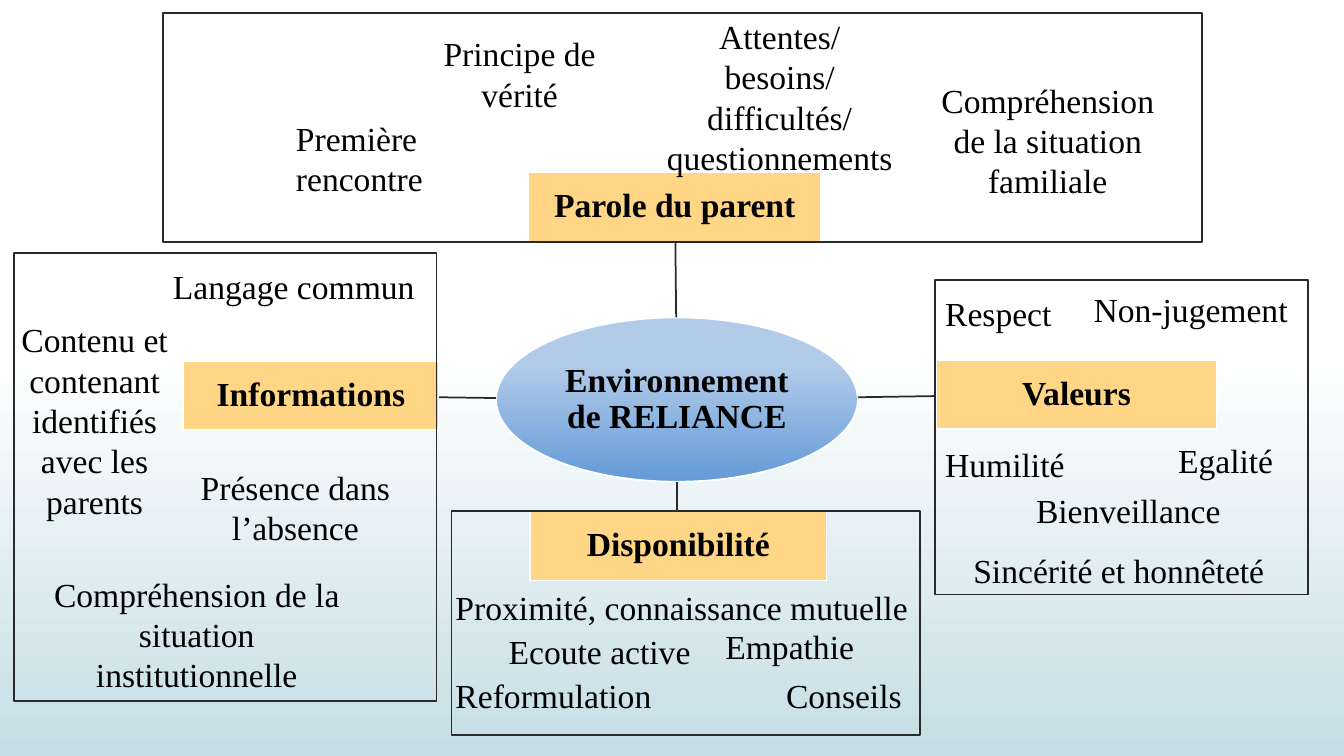
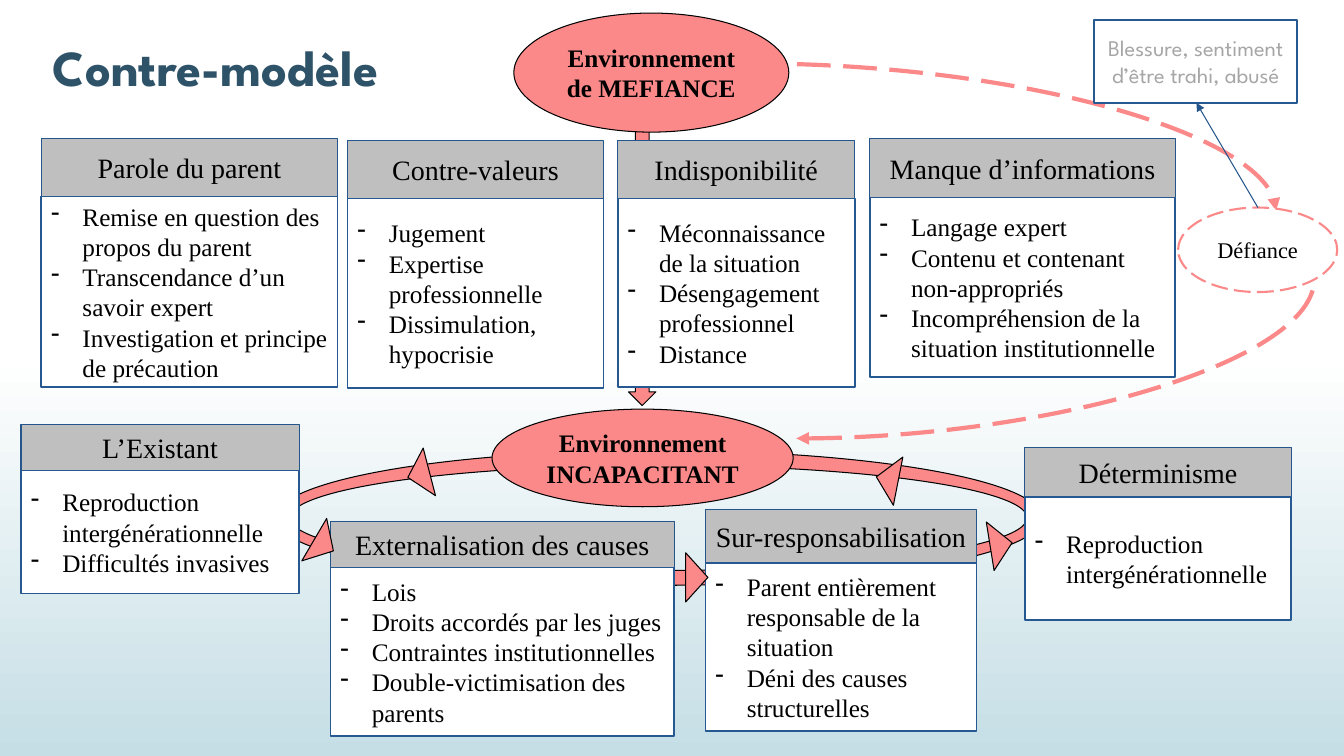
import lxml.etree
import pptx
import pptx.dml.color
import pptx.enum.dml
import pptx.enum.shapes
import pptx.enum.text
import pptx.oxml.ns
import pptx.util

Cm = pptx.util.Cm
Pt = pptx.util.Pt
SHAPE = pptx.enum.shapes.MSO_SHAPE
CONNECTOR = pptx.enum.shapes.MSO_CONNECTOR
ALIGN = pptx.enum.text.PP_ALIGN
ANCHOR = pptx.enum.text.MSO_ANCHOR
AUTO_SIZE = pptx.enum.text.MSO_AUTO_SIZE
qn = pptx.oxml.ns.qn

COLOURS = {
    "white": "FFFFFF", "black": "000000", "mist": "C5DEE5", "title": "2E5369",
    "sky": "B1CBE9", "blue": "649AD6", "amber": "FFD686", "ink": "2A2A2A",
    "coral": "FB8989", "grey": "BFBFBF", "pale": "A6A6A6",
    "header": "24558B", "card": "265991",
}
SERIF = "Times New Roman"
DISPLAY = "League Spartan"
FONTS = {
    "title": ({"name": DISPLAY, "size": Pt(36), "bold": True}, "title"),
    "hub": ({"name": SERIF, "size": Pt(24), "bold": True}, "black"),
    "label": ({"name": SERIF, "size": Pt(24)}, "black"),
    "header": ({"name": SERIF, "size": Pt(20)}, "black"),
    "item": ({"name": SERIF, "size": Pt(18)}, "black"),
    "state": ({"name": SERIF, "size": Pt(18), "bold": True}, "black"),
    "small": ({"name": SERIF, "size": Pt(16)}, "black"),
    "remark": ({"name": DISPLAY, "size": Pt(16)}, "pale"),
}
LONG_DASH = pptx.enum.dml.MSO_LINE.LONG_DASH

RELIANCE_LINKS = [
    ((17.04, 8), (17.02, 6.1)), ((21.62, 10.01), (23.6, 9.98)),
    ((17.07, 12.14), (17.07, 12.88)), ((12.5, 10.03), (11.05, 10.01)),
]
RELIANCE_THEMES = [
    ("Parole du parent", 13.31, 4.34, 7.39), ("Valeurs", 23.6, 9.07, 7.06),
    ("Disponibilité", 13.36, 12.88, 7.47), ("Informations", 4.62, 9.09, 6.43),
]
RELIANCE_FRAMES = [
    (4.11, 0.33, 26.19, 5.77), (23.57, 7.06, 9.4, 7.92),
    (11.38, 12.88, 11.81, 5.64), (0.36, 6.38, 10.64, 11.28),
]
LEFT_LABELS = [
    ("Première rencontre", 7.21, 2.84, 4.17, 2),
    ("Sincérité et honnêteté", 24.28, 13.72, 8.03, 1),
    ("Bienveillance", 25.86, 12.22, 6.05, 1),
    ("Egalité", 29.44, 10.97, 4.37, 1),
    ("Humilité", 23.57, 11.05, 3.61, 1),
    ("Non-jugement", 27.31, 7.16, 5.64, 1),
    ("Respect", 23.57, 7.26, 5.87, 1),
    ("Reformulation", 11.23, 16.87, 5.51, 1),
    ("Proximité, connaissance mutuelle", 11.23, 14.66, 11.96, 1),
    ("Ecoute active", 12.57, 15.77, 5.18, 1),
    ("Empathie", 18.03, 15.65, 3.78, 1),
    ("Conseils", 19.56, 16.89, 3.45, 1),
    ("Langage commun", 4.11, 6.58, 6.96, 1),
]
CENTRED_LABELS = [
    ("Attentes/besoins/difficultés/ questionnements", 16.46, 0.28, 6.38, 4),
    ("Compréhension de la situation familiale", 23.37, 1.88, 6.07, 3),
    ("Principe de vérité", 10.39, 0.71, 5.41, 2),
    ("Contenu et contenant identifiés avec les parents", -0.23, 7.92, 5.23, 5),
    ("Présence dans l’absence", 4.78, 11.63, 5.33, 2),
    ("Compréhension de la situation institutionnelle", 0.97, 14.33, 7.98, 3),
]
CARDS = [
    ("Parole du parent", 1.04, 3.48, 7.47, 1.47, 4.8,
     ["Remise en question des propos du parent", "Transcendance d’un savoir expert",
      "Investigation et principe de précaution"]),
    ("Contre-valeurs", 8.76, 3.53, 6.45, 1.47, 4.78,
     ["Jugement", "Expertise professionnelle", "Dissimulation, hypocrisie"]),
    ("Indisponibilité", 15.57, 3.53, 5.97, 1.47, 4.75,
     ["Méconnaissance de la situation", "Désengagement professionnel", "Distance"]),
    ("Manque d’informations", 21.92, 3.48, 7.7, 1.5, 4.52,
     ["Langage expert", "Contenu et contenant non-appropriés",
      "Incompréhension de la situation institutionnelle"]),
    ("L’Existant", 0.53, 10.69, 7.01, 1.17, 3.1,
     ["Reproduction intergénérationnelle", "Difficultés invasives"]),
    ("Externalisation des causes", 8.33, 13.13, 8.66, 1.17, 4.24,
     ["Lois", "Droits accordés par les juges", "Contraintes institutionnelles",
      "Double-victimisation des parents"]),
    ("Sur-responsabilisation", 17.78, 12.83, 6.83, 1.35, 4.24,
     ["Parent entièrement responsable de la situation",
      "Déni des causes structurelles"]),
    ("Déterminisme", 25.83, 11.28, 6.71, 1.24, 3.1,
     ["Reproduction intergénérationnelle"]),
]
CYCLE_HEADS = [
    (16.94, 14.27, 90), (7.54, 13.46, 120.4), (24.61, 13.44, 80.9),
    (9.93, 11.68, 255.5), (21.74, 11.79, 281.1),
]


def colour(name):
    return pptx.dml.color.RGBColor.from_string(COLOURS[name])


class Deck:
    """Hold the shared style and the current slide, and draw each kind of element."""

    def __init__(self):
        self.presentation = pptx.Presentation()
        self.presentation.slide_width = Cm(33.87)
        self.presentation.slide_height = Cm(19.05)
        self.slide = None
        background = self.presentation.slide_master.background
        self.gradient(background.fill, ("white", 0.47), ("mist", 1))

    def gradient(self, fill, *stops):
        fill.gradient()
        fill.gradient_angle = 270
        for stop, (name, position) in zip(fill.gradient_stops, stops):
            stop.color.rgb = colour(name)
            stop.position = position

    def new_slide(self, title=None):
        layout = self.presentation.slide_layouts[5 if title else 6]
        self.slide = self.presentation.slides.add_slide(layout)
        if title:
            shape = self.slide.shapes.title
            box = {"left": 0.1, "top": 0.76, "width": 10.67, "height": 1.8}
            for name, value in box.items():
                setattr(shape, name, Cm(value))
            self.set_text(shape, [title], "title", auto_size=AUTO_SIZE.NONE)

    def set_text(self, shape, lines, style, align=ALIGN.CENTER, spacing=None,
                 bullet=None, **frame_format):
        frame = shape.text_frame
        settings = {"word_wrap": True, "vertical_anchor": ANCHOR.MIDDLE}
        for name, value in {**settings, **frame_format}.items():
            setattr(frame, name, value)
        font_format, font_colour = FONTS[style]
        for index, line in enumerate(lines):
            paragraph = frame.add_paragraph() if index else frame.paragraphs[0]
            paragraph.alignment = align
            paragraph.line_spacing = spacing
            run = paragraph.add_run()
            run.text = line
            for name, value in font_format.items():
                setattr(run.font, name, value)
            run.font.color.rgb = colour(font_colour)
            if bullet:
                properties = paragraph._p.get_or_add_pPr()
                properties.set("marL", str(Cm(0.79)))
                properties.set("indent", str(-Cm(0.79)))
                lxml.etree.SubElement(properties, qn("a:buChar")).set("char", bullet)

    def outline(self, line, name, width, dash=None):
        line.color.rgb = colour(name)
        line.width = Pt(width)
        if dash:
            line.dash_style = dash

    def shape(self, kind, box, fill, line, width=0.75, dash=None):
        shape = self.slide.shapes.add_shape(kind, *map(Cm, box))
        shape.shadow.inherit = False
        if fill:
            shape.fill.solid()
            shape.fill.fore_color.rgb = colour(fill)
        else:
            shape.fill.background()
        self.outline(shape.line, line, width, dash)
        return shape

    def label(self, text, left, top, width, lines, align):
        box = (left, top, width, 0.25 + 1.02 * lines)
        shape = self.slide.shapes.add_textbox(*map(Cm, box))
        self.set_text(shape, [text], "label", align, vertical_anchor=ANCHOR.TOP,
                      auto_size=AUTO_SIZE.SHAPE_TO_FIT_TEXT)

    def hub(self, shape, text):
        sides = ("left", "top", "right", "bottom")
        margins = {f"margin_{side}": Cm(0.05) for side in sides}
        self.set_text(shape, [text], "hub", spacing=0.9, **margins)

    def state(self, text, *box):
        shape = self.shape(SHAPE.OVAL, box, "coral", "black")
        self.set_text(shape, [text], "state")

    def card(self, title, left, top, width, header_height, body_height, items):
        header_box = (left, top, width, header_height)
        header = self.shape(SHAPE.RECTANGLE, header_box, "grey", "header")
        self.set_text(header, [title], "header")
        body_box = (left, top + header_height, width, body_height)
        body = self.shape(SHAPE.RECTANGLE, body_box, "white", "card", 1.25)
        self.set_text(body, items, "item", ALIGN.LEFT, bullet="-")

    def connector(self, start, end, name, width, arrow=None, curved=False):
        kind = CONNECTOR.CURVE if curved else CONNECTOR.STRAIGHT
        connector = self.slide.shapes.add_connector(kind, *map(Cm, start + end))
        self.outline(connector.line, name, width, LONG_DASH if curved else None)
        properties = connector._element.spPr
        if curved:
            properties.find(qn("a:prstGeom")).set("prst", "curvedConnector2")
        if arrow:
            line = properties.find(qn("a:ln"))
            lxml.etree.SubElement(line, qn(f"a:{arrow}")).set("type", "triangle")
        lxml.etree.SubElement(properties, qn("a:effectLst"))


def build_reliance(deck):
    deck.new_slide()
    centre = deck.shape(SHAPE.OVAL, (12.5, 8, 9.12, 4.14), None, "white", 1.25)
    deck.gradient(centre.fill, ("sky", 0.29), ("blue", 1))
    deck.hub(centre, "Environnement de RELIANCE")
    for start, end in RELIANCE_LINKS:
        deck.connector(start, end, "ink", 1.25)
    for text, left, top, width in RELIANCE_THEMES:
        box = (left, top, width, 1.75)
        theme = deck.shape(SHAPE.FLOWCHART_PROCESS, box, "amber", "white", 1.25)
        deck.hub(theme, text)
    for label in LEFT_LABELS:
        deck.label(*label, ALIGN.LEFT)
    for label in CENTRED_LABELS:
        deck.label(*label, ALIGN.CENTER)
    for box in RELIANCE_FRAMES:
        deck.shape(SHAPE.RECTANGLE, box, None, "ink", 1.25)


def build_counter_model(deck):
    deck.new_slide("Contre-modèle")
    deck.shape(SHAPE.DOWN_ARROW, (15.84, 3.21, 0.69, 7.01), "coral", "black")
    cycle = deck.shape(SHAPE.DONUT, (6.93, 11.35, 19.33, 3.4), "coral", "black")
    cycle.adjustments[0] = 0.11
    deck.connector((18.92, 1.6), (32.16, 5.31), "coral", 3, "tailEnd", curved=True)
    for card in CARDS:
        deck.card(*card)
    distrust = deck.shape(SHAPE.OVAL, (29.69, 5.23, 4.01, 2.13), "white", "coral",
                          1.5, LONG_DASH)
    deck.set_text(distrust, ["Défiance"], "small")
    wound = deck.shape(SHAPE.RECTANGLE, (27.58, 0.51, 5.11, 2.08), "white", "card", 1.25)
    deck.set_text(wound, ["Blessure, sentiment d’être trahi, abusé"], "remark")
    deck.connector((31.7, 5.23), (30.15, 2.59), "header", 0.75, "tailEnd")
    for left, top, rotation in CYCLE_HEADS:
        box = (left, top, 1.24, 0.56)
        head = deck.shape(SHAPE.ISOSCELES_TRIANGLE, box, "coral", "black")
        head.rotation = rotation
    deck.state("Environnement de MEFIANCE", 12.95, 0.33, 6.93, 3)
    deck.state("Environnement INCAPACITANT", 12.4, 10.31, 7.59, 2.46)
    deck.connector((20.07, 11.05), (33.12, 7.04), "coral", 3, "headEnd", curved=True)


def main():
    deck = Deck()
    build_reliance(deck)
    build_counter_model(deck)
    deck.presentation.save("out.pptx")


if __name__ == "__main__":
    main()
